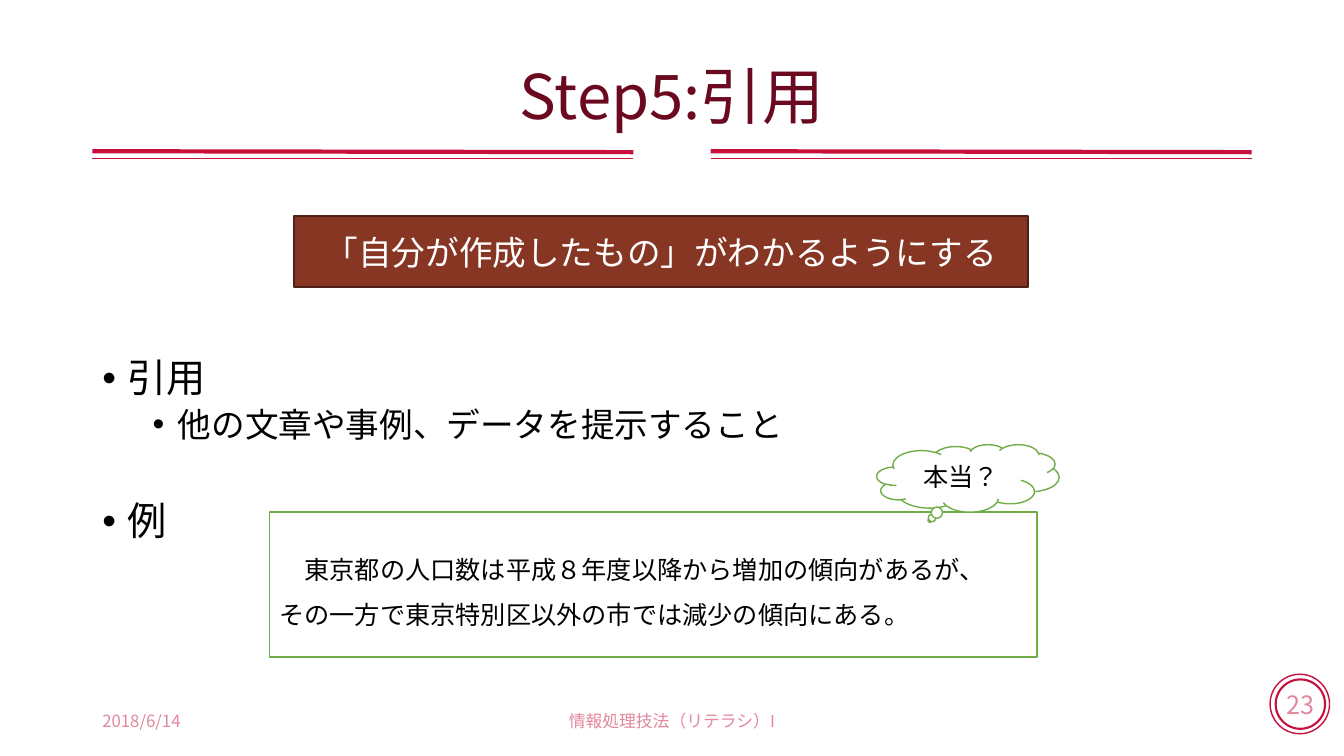
from lxml import etree
from pptx import Presentation
from pptx.dml.color import RGBColor
from pptx.enum import lang, shapes, text
from pptx.oxml.ns import qn
from pptx.util import Pt

NOTO = "Noto Sans CJK JP"
CRIMSON, GREEN, WHITE = "C8103D", "70AD47", "FFFFFF"
LEFT, CENTER = text.PP_ALIGN.LEFT, text.PP_ALIGN.CENTER
MIDDLE, TOP = text.MSO_ANCHOR.MIDDLE, text.MSO_ANCHOR.TOP


def rgb(color):
    return RGBColor.from_string(color)


def write(sp, *lines, size=18, color="000000", font=NOTO, align=CENTER,
          anchor=MIDDLE, wrap=True, spacing=1.0, alpha=None):
    """Fill a shape; each line is (text, options: size, before, margin, indent, bullet)."""
    tf = sp.text_frame
    tf.word_wrap = wrap
    tf.vertical_anchor = anchor
    for i, (content, opts) in enumerate(lines):
        p = tf.paragraphs[0] if i == 0 else tf.add_paragraph()
        p.alignment = align
        p.line_spacing = spacing
        p.space_before = Pt(opts.get("before", 0))
        pPr = p._p.get_or_add_pPr()
        pPr.set("marL", str(Pt(opts.get("margin", 0))))
        pPr.set("indent", str(Pt(opts.get("indent", 0))))
        if opts.get("bullet"):
            etree.SubElement(pPr, qn("a:buFont")).set("typeface", "Arial")
            etree.SubElement(pPr, qn("a:buChar")).set("char", "•")
        r = p.add_run()
        r.text = content
        r.font.size = Pt(opts.get("size", size))
        r.font.name = font
        r.font.language_id = lang.MSO_LANGUAGE_ID.JAPANESE
        r.font.color.rgb = rgb(color)
        rPr = r._r.get_or_add_rPr()
        etree.SubElement(rPr, qn("a:ea")).set("typeface", NOTO)
        if alpha:
            clr = rPr.find(".//" + qn("a:srgbClr"))
            etree.SubElement(clr, qn("a:alpha")).set("val", str(alpha * 1000))


prs = Presentation()
prs.slide_width, prs.slide_height = Pt(960), Pt(540)
s = prs.slides.add_slide(prs.slide_layouts[5])

# Double rules on both sides below the title
for x in (507.6, 66):
    for y1, y2, width in ((108, 108.7, 3), (113.2, 113.2, 1)):
        rule = s.shapes.add_connector(shapes.MSO_CONNECTOR.STRAIGHT,
                                      Pt(x), Pt(y1), Pt(x + 386.5), Pt(y2))
        rule.line.color.rgb = rgb(CRIMSON)
        rule.line.width = Pt(width)
        etree.SubElement(rule._element.spPr, qn("a:effectLst"))

title = s.shapes.title
title.left, title.top, title.width, title.height = Pt(66), Pt(28.8), Pt(828), Pt(84.2)
write(title, ("Step5:引用", {}), size=44, color="6B0920", spacing=0.9)

body = s.shapes.add_textbox(Pt(66), Pt(252.7), Pt(828), Pt(233.3))
top_level = dict(size=28, margin=18, indent=-18, bullet=True)
sub_level = dict(size=24, margin=54, indent=-18, bullet=True, before=5)
write(body, ("引用", top_level),
      ("他の文章や事例、データを提示すること", sub_level),
      ("例", dict(top_level, before=41)),
      align=LEFT, anchor=TOP, spacing=0.9)

for x, width, footer, align in ((66, 216, "2018/6/14", LEFT),
                                (318, 324, "情報処理技法（リテラシ）I", CENTER)):
    box = s.shapes.add_textbox(Pt(x), Pt(500.5), Pt(width), Pt(28.8))
    write(box, (footer, {}), size=12, color=CRIMSON, align=align, alpha=50)

SHAPE = shapes.MSO_SHAPE
drawn = []
for kind, x, y, w, h, fill, line, width in (
        (SHAPE.OVAL, 907.2, 481.6, 42.5, 42.5, WHITE, CRIMSON, 1),
        (SHAPE.OVAL, 911.2, 485.3, 35.3, 35.3, WHITE, CRIMSON, 1.5),
        (SHAPE.RECTANGLE, 210.2, 154.5, 523.9, 50.7, "873624", "4F2015", 1.5),
        (SHAPE.RECTANGLE, 192.4, 365.8, 548.4, 103.5, WHITE, GREEN, 1),
        (SHAPE.CLOUD_CALLOUT, 626.2, 317.5, 130.3, 48.2, WHITE, GREEN, 1)):
    sp = s.shapes.add_shape(kind, Pt(x), Pt(y), Pt(w), Pt(h))
    sp.shadow.inherit = False
    sp.fill.solid()
    sp.fill.fore_color.rgb = rgb(fill)
    sp.line.color.rgb = rgb(line)
    sp.line.width = Pt(width)
    drawn.append(sp)
outer_ring, page_number, message, example, doubt = drawn

write(page_number, ("23", {}), color=CRIMSON, wrap=False, alpha=50)
write(message, ("「自分が作成したもの」がわかるようにする", {}),
      size=24, color=WHITE, font="Cambria")
write(example,
      ("東京都の人口数は平成８年度以降から増加の傾向があるが、", {"indent": 18}),
      ("その一方で東京特別区以外の市では減少の傾向にある。", {}),
      align=LEFT, spacing=1.5)
write(doubt, ("本当？", {}))

prs.save("out.pptx")
